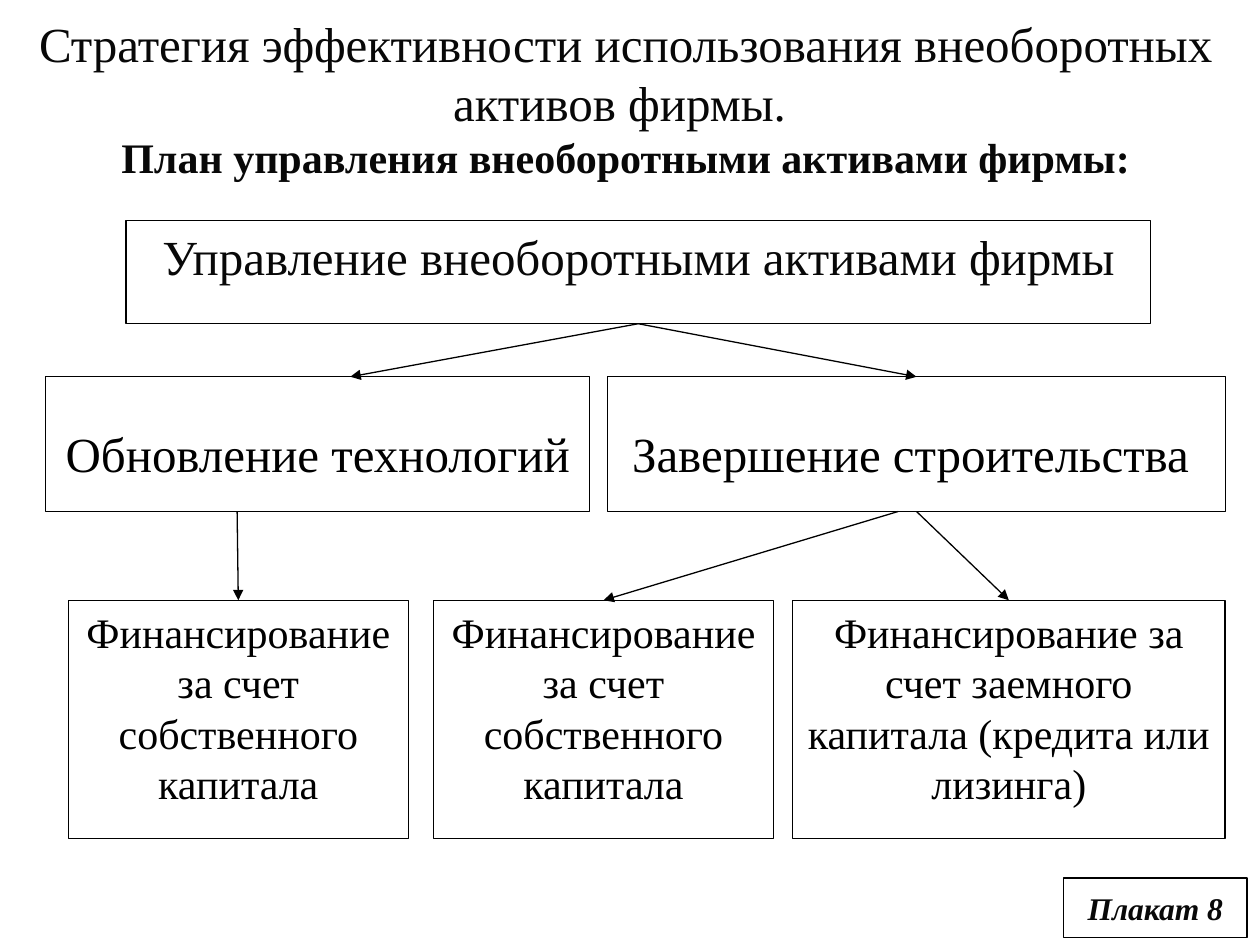
from lxml import etree
from pptx import Presentation
from pptx.dml.color import RGBColor
from pptx.enum.shapes import MSO_CONNECTOR, MSO_SHAPE
from pptx.enum.text import MSO_ANCHOR, PP_ALIGN
from pptx.oxml.ns import qn
from pptx.util import Pt

BLACK = RGBColor(0x00, 0x00, 0x00)
INK = RGBColor(0x08, 0x08, 0x08)
WHITE = RGBColor(0xFF, 0xFF, 0xFF)
FONT = "Times New Roman"
TOP, BOTTOM = 0, 2


def style_span(span, size, color, bold=False, italic=False):
    """Format one run of text."""
    font = span.font
    font.name, font.size, font.color.rgb = FONT, Pt(size), color
    font.bold, font.italic = bold, italic


def add_title(page, left, top, width, height):
    """Place the heading and its bold second part."""
    box = page.shapes.add_textbox(Pt(left), Pt(top), Pt(width), Pt(height))
    box.text_frame.word_wrap = True
    para = box.text_frame.paragraphs[0]
    para.text = ("Стратегия эффективности использования внеоборотных активов фирмы. "
                 "\vПлан управления внеоборотными активами фирмы:")
    para.alignment = PP_ALIGN.CENTER
    para.space_before = Pt(5)
    heading, plan = para.runs
    style_span(heading, 28, INK)
    style_span(plan, 24, INK, bold=True)


def add_box(page, left, top, width, height, text, size, color=BLACK,
            inset=3.6, anchor=MSO_ANCHOR.TOP, emphasis=False):
    """Place an outlined rectangle with centred text."""
    box = page.shapes.add_shape(MSO_SHAPE.RECTANGLE, Pt(left), Pt(top), Pt(width), Pt(height))
    box.shadow.inherit = False
    box.fill.solid()
    box.fill.fore_color.rgb = WHITE
    box.line.color.rgb = BLACK
    box.line.width = Pt(0.75)
    frame = box.text_frame
    frame.word_wrap = True
    frame.vertical_anchor = anchor
    frame.margin_top = Pt(inset)
    para = frame.paragraphs[0]
    para.text = text
    para.alignment = PP_ALIGN.CENTER
    style_span(para.runs[0], size, color, emphasis, emphasis)
    return box


def add_arrow(page, source, target, source_shift=0, target_shift=0):
    """Lead an arrow from the bottom of one box to the top of another."""
    start_x = source.left + source.width // 2 + Pt(source_shift)
    end_x = target.left + target.width // 2 + Pt(target_shift)
    arrow = page.shapes.add_connector(
        MSO_CONNECTOR.STRAIGHT, start_x, source.top + source.height, end_x, target.top)
    if not source_shift:
        arrow.begin_connect(source, BOTTOM)
    if not target_shift:
        arrow.end_connect(target, TOP)
    arrow.line.color.rgb = BLACK
    arrow.line.width = Pt(0.75)
    etree.SubElement(arrow.line._get_or_add_ln(), qn("a:tailEnd"), type="triangle")
    etree.SubElement(arrow._element.spPr, qn("a:effectLst"))


def add_tree(page, left, top):
    """Place the three levels of the plan and the arrows between them."""
    root = add_box(page, left + 46, top, 585.5, 59,
                   "Управление внеоборотными активами фирмы", 28, INK)
    technology, construction = [
        add_box(page, left + offset, top + 89.3, width, 77, text, 28, inset=26.6)
        for offset, width, text in (
            (0, 311, "Обновление технологий"),
            (321, 353.5, "Завершение строительства "),
        )
    ]
    own_funds = "Финансирование за счет собственного капитала"
    technology_funds, construction_funds, loan = [
        add_box(page, left + offset, top + 217, width, 136, text, 24)
        for offset, width, text in (
            (13, 194.4, own_funds),
            (221.7, 194.4, own_funds),
            (427, 247, "Финансирование за счет заемного капитала (кредита или лизинга)"),
        )
    ]
    add_arrow(page, root, technology, target_shift=18.7)
    add_arrow(page, root, construction)
    add_arrow(page, technology, technology_funds, source_shift=-46)
    add_arrow(page, construction, construction_funds, source_shift=-10.5)
    add_arrow(page, construction, loan)


def main():
    """Build the slide and save it."""
    deck = Presentation()
    deck.slide_width, deck.slide_height = Pt(720), Pt(540)
    page = deck.slides.add_slide(deck.slide_layouts[6])
    add_title(page, 11.5, 4.3, 692, 102)
    add_tree(page, 26, 126)
    add_box(page, 607.7, 501.8, 105, 34, "Плакат 8", 18, INK,
            anchor=MSO_ANCHOR.MIDDLE, emphasis=True)
    deck.save("out.pptx")


if __name__ == "__main__":
    main()
